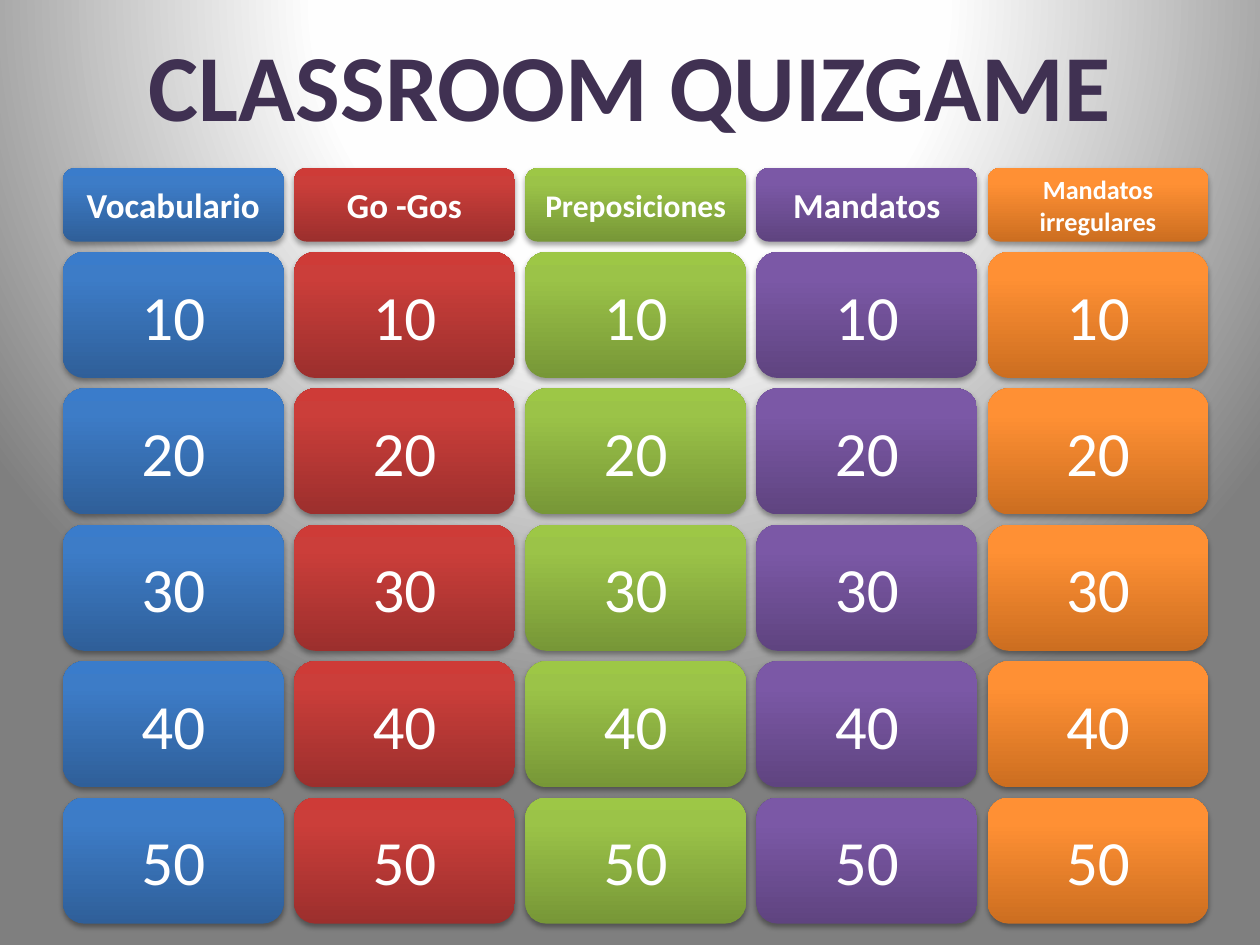
"""Build a quiz board slide with five topics and five point values."""
from lxml import etree
from pptx import Presentation
from pptx import util as u
from pptx.dml.color import RGBColor
from pptx.enum import shapes, text
from pptx.oxml import ns

WHITE = RGBColor(0xFF, 0xFF, 0xFF)
PALE = RGBColor(0xFE, 0xFE, 0xFE)
GREY = RGBColor(0x7F, 0x7F, 0x7F)
BLACK = RGBColor(0, 0, 0)
PLUM = RGBColor(0x40, 0x31, 0x52)
BLUE = RGBColor(0x2F, 0x5F, 0x99), RGBColor(0x3D, 0x7C, 0xC7), RGBColor(0x3A, 0x7C, 0xCB)
RED = RGBColor(0x9C, 0x2F, 0x2D), RGBColor(0xCB, 0x3E, 0x3A), RGBColor(0xCE, 0x3B, 0x37)
GREEN = RGBColor(0x77, 0x97, 0x37), RGBColor(0x9B, 0xC3, 0x48), RGBColor(0x9D, 0xC7, 0x46)
PURPLE = RGBColor(0x5F, 0x44, 0x80), RGBColor(0x7B, 0x58, 0xA6), RGBColor(0x7C, 0x57, 0xA8)
ORANGE = RGBColor(0xCC, 0x6E, 0x20), RGBColor(0xFF, 0x90, 0x34), RGBColor(0xFF, 0x91, 0x36)

TITLE = "CLASSROOM QUIZGAME"
TOPICS = [
    ("Vocabulario", 20, BLUE),
    ("Go -Gos", 20, RED),
    ("Preposiciones", 18, GREEN),
    ("Mandatos", 20, PURPLE),
    ("Mandatos irregulares", 15, ORANGE),
]
POINTS = [10, 20, 30, 40, 50]

FONT = "Calibri"
LEFT, WIDE, STEP = 1.27, 4.45, 4.66
HEAD_TOP, HEAD_HIGH = 3.39, 1.48
TILE_TOP, TILE_HIGH, TILE_STEP = 5.08, 2.54, 2.75
UPWARD = '<a:lin ang="16200000" scaled="0"/>'
GLOW = '<a:path path="circle"><a:fillToRect l="50000" t="-80000" r="50000" b="180000"/></a:path>'
SHADOW = (
    '<a:outerShdw {ns} blurRad="40000" dist="23000" dir="5400000" rotWithShape="0">'
    '<a:srgbClr val="{hue}"><a:alpha val="35000"/></a:srgbClr></a:outerShdw>'
)


def blend(root, fill, spots, hues, way):
    """Give the fill found under root a gradient of many stops."""
    fill.background()
    stops = "".join(
        f'<a:gs pos="{spot * 1000}"><a:srgbClr val="{hue}"/></a:gs>'
        for spot, hue in zip(spots, hues)
    )
    grad = etree.fromstring(
        f'<a:gradFill {ns.nsdecls("a")} rotWithShape="1"><a:gsLst>{stops}</a:gsLst>{way}</a:gradFill>'
    )
    old = root.find(".//" + ns.qn("a:noFill"))
    old.getparent().replace(old, grad)


def write(shape, words, size, hue, bold):
    """Put centred words in a shape."""
    frame = shape.text_frame
    frame.word_wrap = True
    frame.vertical_anchor = text.MSO_ANCHOR.MIDDLE
    para = frame.paragraphs[0]
    para.alignment = text.PP_ALIGN.CENTER
    run = para.add_run()
    run.text = words
    run.font.name = FONT
    run.font.size = u.Pt(size)
    run.font.bold = bold
    run.font.color.rgb = hue


def add_tile(slide, col, top, high, words, size, hues, bold=False):
    """Add one rounded tile to a column of the board."""
    tile = slide.shapes.add_shape(
        shapes.MSO_SHAPE.ROUNDED_RECTANGLE,
        u.Cm(LEFT + col * STEP), u.Cm(top), u.Cm(WIDE), u.Cm(high),
    )
    blend(tile.element.spPr, tile.fill, (0, 80, 100), hues, UPWARD)
    tile.line.fill.background()
    tile.shadow.inherit = False
    shade = etree.fromstring(SHADOW.format(ns=ns.nsdecls("a"), hue=BLACK))
    tile.element.spPr.find(ns.qn("a:effectLst")).append(shade)
    write(tile, words, size, WHITE, bold)


def main():
    """Make the slide and save it."""
    deck = Presentation()
    deck.slide_width, deck.slide_height = u.Cm(25.4), u.Cm(19.05)
    slide = deck.slides.add_slide(deck.slide_layouts[6])
    blend(slide.element, slide.background.fill, (0, 40, 100), (WHITE, PALE, GREY), GLOW)

    title = slide.shapes.add_textbox(u.Cm(LEFT), u.Cm(0), u.Cm(22.86), u.Cm(3.39))
    write(title, TITLE, 54, PLUM, True)

    for col, (topic, size, hues) in enumerate(TOPICS):
        add_tile(slide, col, HEAD_TOP, HEAD_HIGH, topic, size, hues, True)
        for row, score in enumerate(POINTS):
            add_tile(slide, col, TILE_TOP + row * TILE_STEP, TILE_HIGH, str(score), 36, hues)

    deck.save("out.pptx")


if __name__ == "__main__":
    main()
